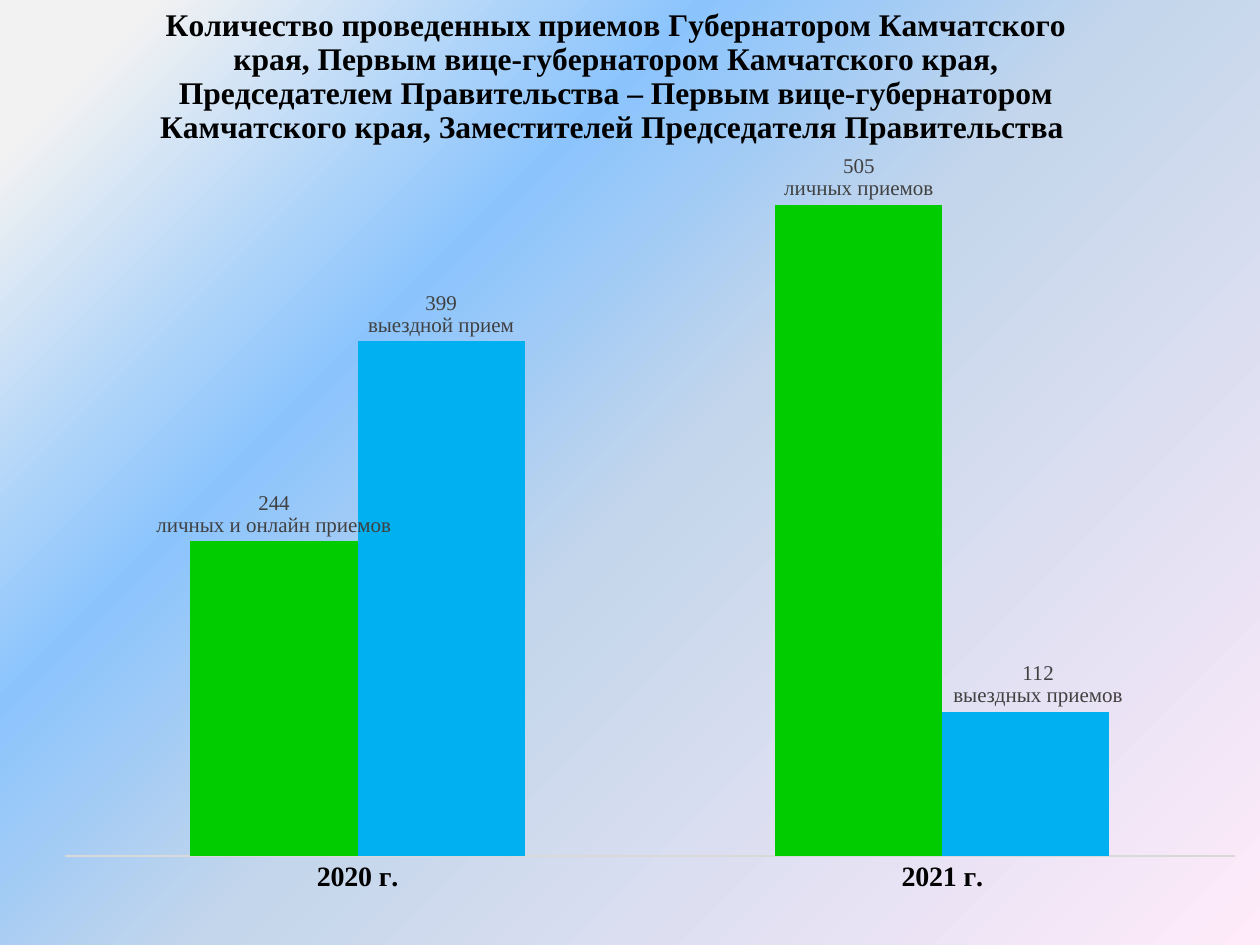
from copy import deepcopy
from lxml import etree
from pptx import Presentation, util as u
from pptx.chart.data import CategoryChartData
from pptx.dml.color import RGBColor
from pptx.enum import chart as ch
from pptx.oxml.ns import qn

BLACK = RGBColor(0, 0, 0)
GRAY = RGBColor(0x40, 0x40, 0x40)
RULE = RGBColor(0xD9, 0xD9, 0xD9)
GREEN = RGBColor(0, 0xCC, 0)
BLUE = RGBColor(0, 0xB0, 0xF0)
STOPS = [
    (0.07, RGBColor(0xF2, 0xF2, 0xF2)),
    (0.32, RGBColor(0x8B, 0xC4, 0xFD)),
    (0.52, RGBColor(0xC4, 0xD6, 0xEB)),
    (1, RGBColor(0xFF, 0xEB, 0xFA)),
]
WIDE, HIGH = u.Inches(10), u.Inches(7.5)
FACE = "Times New Roman"
TITLE = ("Количество проведенных приемов Губернатором Камчатского края, "
         "Первым вице-губернатором Камчатского края, Председателем "
         "Правительства – Первым вице-губернатором Камчатского края, "
         "Заместителей Председателя Правительства ")
YEARS = ["2020 г.", "2021 г."]
ROWS = [
    ("Series 1", GREEN, [(244, "личных и онлайн приемов", 0), (505, "личных приемов", 0)]),
    ("Series 2", BLUE, [(399, "выездной прием", 0), (112, "выездных приемов", 0.01)]),
]
HEAD = dict(name=FACE, size=u.Pt(18), bold=True)
AXIS = dict(name=FACE, size=u.Pt(16), bold=True)
LABEL = dict(name=FACE, size=u.Pt(12), bold=False)
CLEAN = dict(has_major_gridlines=False, has_minor_gridlines=False,
             major_tick_mark=ch.XL_TICK_MARK.NONE,
             minor_tick_mark=ch.XL_TICK_MARK.NONE)
SCALE = dict(visible=False, minimum_scale=0, maximum_scale=520, major_unit=10)
ABOVE = dict(show_value=True, position=ch.XL_LABEL_POSITION.OUTSIDE_END)


def put(item, form):
    for key, val in form.items():
        setattr(item, key, val)


def style(font, form, color):
    put(font, form)
    font.color.rgb = color


def place(part, share, prior=None):
    for old in part.findall(qn("c:layout")):
        part.remove(old)
    outer = etree.Element(qn("c:layout"))
    inner = etree.SubElement(outer, qn("c:manualLayout"))
    for key, val in share.items():
        etree.SubElement(inner, qn("c:" + key)).set("val", str(val))
    spot = part.index(part.find(qn(prior))) + 1 if prior else 0
    part.insert(spot, outer)


def paint(slide):
    fill = slide.background.fill
    fill.gradient()
    fill.gradient_angle = 315
    base = next(slide.element.iter(qn("a:gsLst")))
    while len(base) < len(STOPS):
        base.append(deepcopy(base[0]))
    for stop, (spot, color) in zip(fill.gradient_stops, STOPS):
        stop.position = spot
        stop.color.rgb = color


def head(chart):
    chart.has_title = True
    title = chart.chart_title
    title.include_in_layout = False
    frame = title.text_frame
    frame.text = TITLE
    style(frame.paragraphs[0].runs[0].font, HEAD, BLACK)
    place(title._element, dict(xMode="edge", yMode="edge", x=0.114, y=-0.004), "c:tx")


def axes(chart):
    cat, val = chart.category_axis, chart.value_axis
    for axis in (cat, val):
        put(axis, CLEAN)
    put(val, SCALE)
    style(cat.tick_labels.font, AXIS, BLACK)
    cat.format.line.color.rgb = RULE
    cat.format.line.width = u.Pt(1)


def tag(line, i, count, kind, shift):
    label = line.points[i].data_label
    frame = label.text_frame
    frame.text = f"{count}\n{kind}"
    frame.word_wrap = False
    for para in frame.paragraphs:
        style(para.runs[0].font, LABEL, GRAY)
    label.position = ch.XL_LABEL_POSITION.OUTSIDE_END
    if shift:
        part = list(line.data_labels._element.iter(qn("c:dLbl")))[i]
        place(part, dict(x=shift, y=0), "c:idx")


def bars(plot):
    put(plot, dict(gap_width=150, overlap=0, vary_by_categories=False))
    for line, (_, color, cells) in zip(plot.series, ROWS):
        line.format.fill.solid()
        line.format.fill.fore_color.rgb = color
        line.invert_if_negative = False
        put(line.data_labels, ABOVE)
        style(line.data_labels.font, {**LABEL, "bold": True}, GRAY)
        for i, cell in enumerate(cells):
            tag(line, i, *cell)


def graph(slide, box):
    data = CategoryChartData()
    data.categories = YEARS
    for name, _, cells in ROWS:
        data.add_series(name, [cell[0] for cell in cells])
    chart = slide.shapes.add_chart(ch.XL_CHART_TYPE.COLUMN_CLUSTERED, *box, data).chart
    chart.has_legend = False
    style(chart.font, dict(name="Calibri", size=u.Pt(10)), BLACK)
    head(chart)
    axes(chart)
    bars(chart.plots[0])
    area = next(chart.element.iter(qn("c:plotArea")))
    place(area, dict(layoutTarget="inner", xMode="edge", yMode="edge",
                     x=0.041, y=0.205, w=0.958, h=0.739))


def main():
    deck = Presentation()
    put(deck, dict(slide_width=WIDE, slide_height=HIGH))
    slide = deck.slides.add_slide(deck.slide_layouts[6])
    paint(slide)
    graph(slide, (int(WIDE * 0.012), int(HIGH * -0.001),
                  int(WIDE * 0.969), int(HIGH * 0.961)))
    deck.save("out.pptx")


if __name__ == "__main__":
    main()
